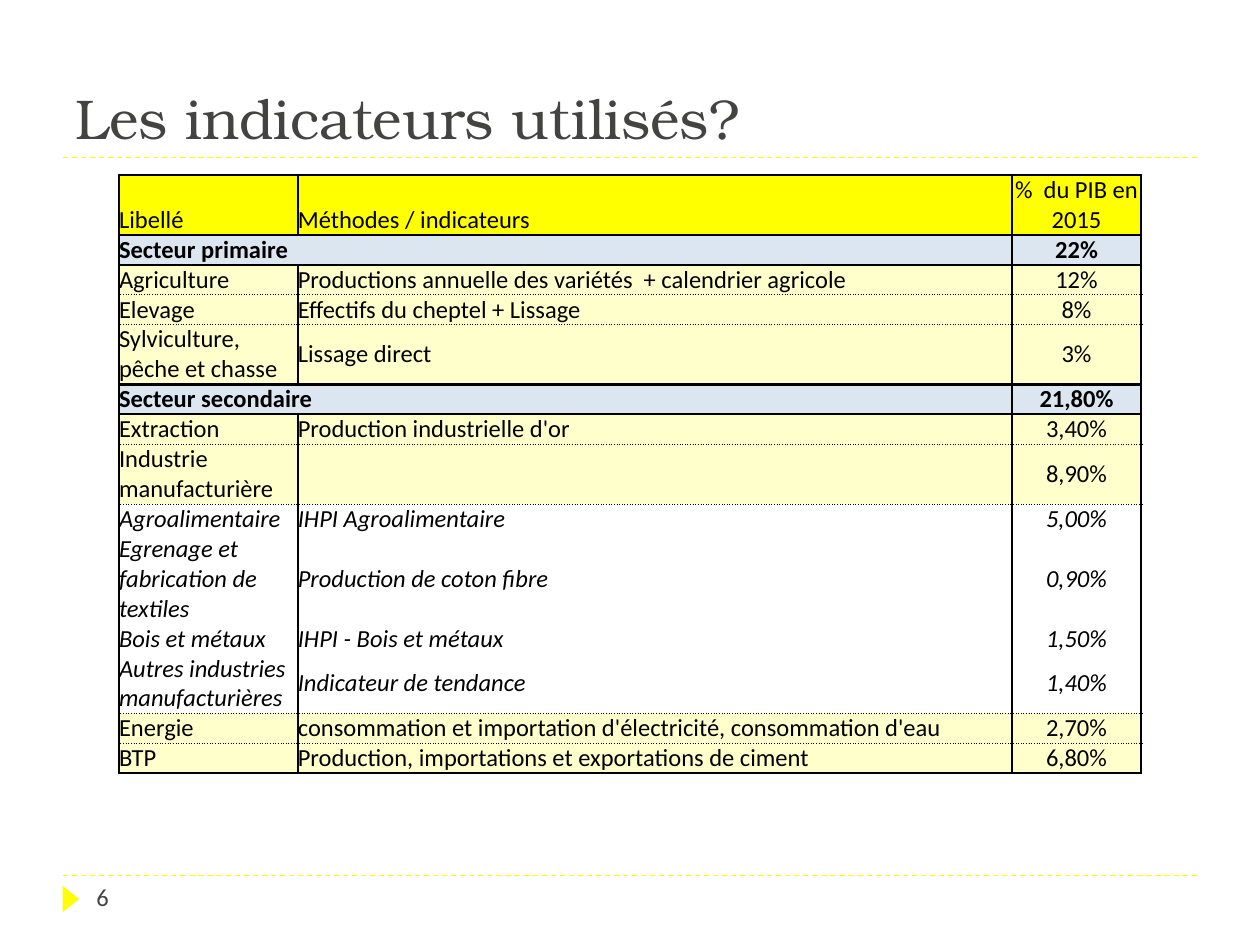
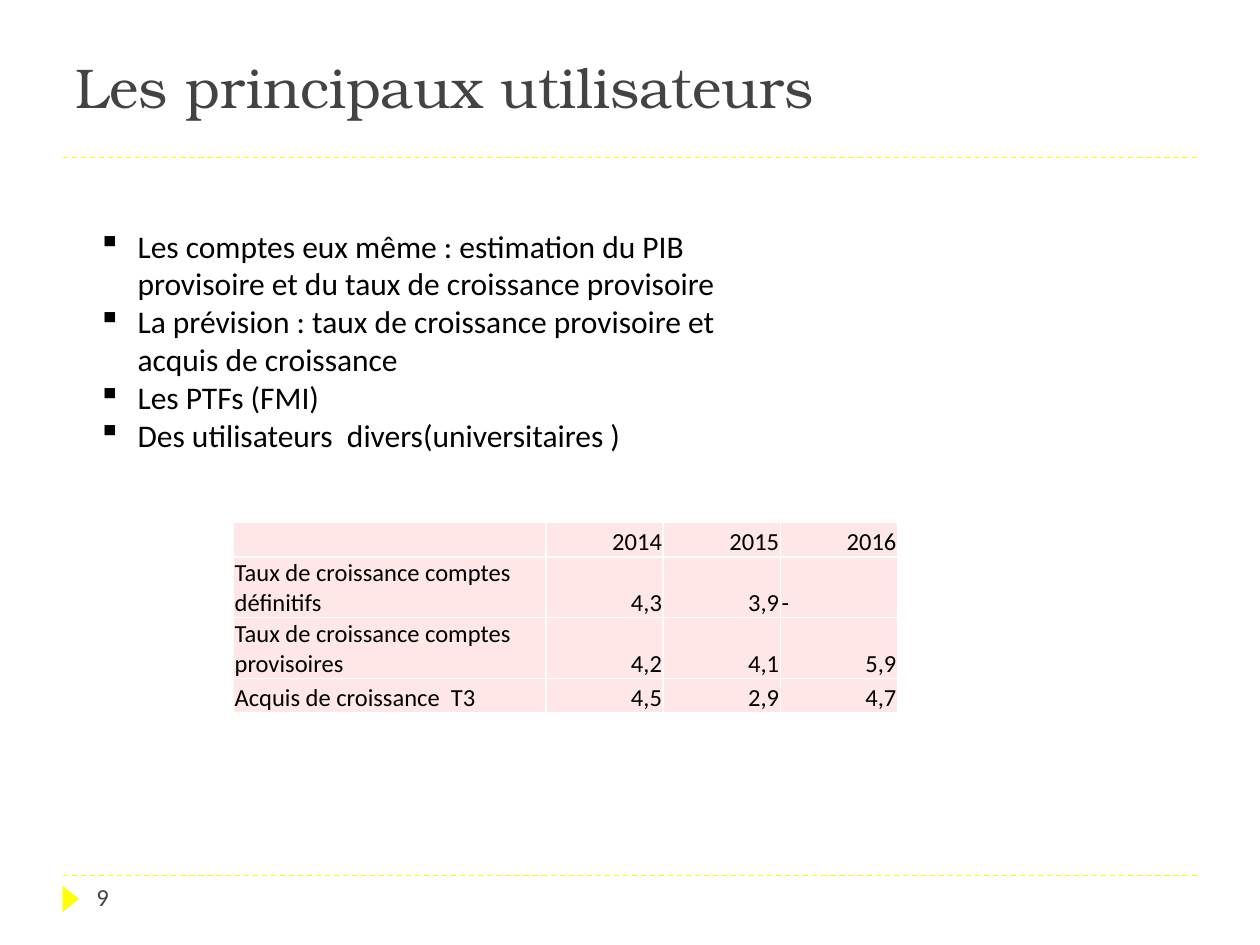
from dataclasses import dataclass

from lxml.etree import SubElement
from pptx import Presentation
from pptx.dml.color import RGBColor
from pptx.enum.dml import MSO_LINE_DASH_STYLE as Dash
from pptx.enum.shapes import MSO_CONNECTOR as Connector, MSO_SHAPE as Shape
from pptx.enum.text import MSO_ANCHOR as Anchor, MSO_AUTO_SIZE as AutoSize, PP_ALIGN as Align
from pptx.oxml.ns import qn
from pptx.util import Pt


@dataclass(frozen=True)
class Theme:
    title_font: str = "TeX Gyre Bonum"
    body_font: str = "Calibri"
    title_size: int = 32
    bullet_size: int = 18
    small_size: int = 14
    accent: str = "FFFF00"
    heading: str = "434342"
    ink: str = "000000"
    sector: str = "DCE6F1"
    branch: str = "FFFFCC"
    growth: str = "FFE7E7"
    gap: str = "FFFFFF"


THEME = Theme()
LEFT, RIGHT = 36, 684
TITLE_RULE, FOOTER_RULE = 90, 500.4

SOLID = (THEME.ink, 1.5, "solid")
DOTTED = (THEME.ink, 0.5, "dot")
WHITE = (THEME.gap, 1, "solid")

ROW_FILLS = {"header": THEME.accent, "sector": THEME.sector,
             "branch": THEME.branch, "detail": None}

INDICATORS = [
    ("header", 2, "Libellé", "Méthodes / indicateurs", "%  du PIB en 2015"),
    ("sector", 1, "Secteur primaire", "", "22%"),
    ("branch", 1, "Agriculture",
     "Productions annuelle des variétés  + calendrier agricole", "12%"),
    ("branch", 1, "Elevage", "Effectifs du cheptel + Lissage", "8%"),
    ("branch", 2, "Sylviculture, pêche et chasse", "Lissage direct", "3%"),
    ("sector", 1, "Secteur secondaire", "", "21,80%"),
    ("branch", 1, "Extraction", "Production industrielle d'or", "3,40%"),
    ("branch", 2, "Industrie manufacturière", "", "8,90%"),
    ("detail", 1, "Agroalimentaire", "IHPI Agroalimentaire", "5,00%"),
    ("detail", 3, "Egrenage et fabrication de textiles", "Production de coton fibre", "0,90%"),
    ("detail", 1, "Bois et métaux", "IHPI - Bois et métaux", "1,50%"),
    ("detail", 2, "Autres industries manufacturières", "Indicateur de tendance", "1,40%"),
    ("branch", 1, "Energie",
     "consommation et importation d'électricité, consommation d'eau", "2,70%"),
    ("branch", 1, "BTP", "Production, importations et exportations de ciment", "6,80%"),
]

GROWTH = [
    ("", "2014", "2015", "2016"),
    ("Taux de croissance comptes définitifs", "4,3", "3,9", "-"),
    ("Taux de croissance comptes provisoires", "4,2", "4,1", "5,9"),
    ("Acquis de croissance  T3", "4,5", "2,9", "4,7"),
]

USES = [
    "Les comptes eux même : estimation du PIB provisoire et du taux de croissance provisoire",
    "La prévision : taux de croissance provisoire et acquis de croissance",
    "Les PTFs (FMI)",
    "Des utilisateurs  divers(universitaires )",
]


def rgb(color):
    return RGBColor.from_string(color)


def add_run(paragraph, text, size, color=THEME.ink, font=THEME.body_font,
            bold=False, italic=False):
    run = paragraph.add_run()
    run.text = text
    run.font.size = Pt(size)
    run.font.name = font
    run.font.color.rgb = rgb(color)
    run.font.bold = bold
    run.font.italic = italic


def add_text_frame(slide, left, top, width, height):
    frame = slide.shapes.add_textbox(Pt(left), Pt(top), Pt(width), Pt(height)).text_frame
    frame.word_wrap = True
    return frame


def add_rule(slide, y):
    rule = slide.shapes.add_connector(Connector.STRAIGHT, Pt(LEFT), Pt(y), Pt(RIGHT), Pt(y))
    rule.line.color.rgb = rgb(THEME.accent)
    rule.line.width = Pt(0.75)
    rule.line.dash_style = Dash.DASH
    SubElement(rule._element.spPr, qn("a:effectLst"))


def add_page_marker(slide, number):
    marker = slide.shapes.add_shape(Shape.ISOSCELES_TRIANGLE, Pt(33), Pt(509), Pt(15), Pt(9.4))
    marker.rotation = 90
    marker.shadow.inherit = False
    marker.fill.solid()
    marker.fill.fore_color.rgb = rgb(THEME.accent)
    marker.line.fill.background()
    frame = add_text_frame(slide, 48, FOOTER_RULE, 156, 28.8)
    add_run(frame.paragraphs[0], number, THEME.small_size, THEME.heading)


def set_title(slide, text, height):
    title = slide.shapes.title
    title.left, title.top, title.width, title.height = Pt(LEFT), Pt(12.2), Pt(RIGHT - LEFT), Pt(height)
    frame = title.text_frame
    frame.auto_size = AutoSize.NONE
    frame.vertical_anchor = Anchor.BOTTOM
    frame.paragraphs[0].alignment = Align.LEFT
    add_run(frame.paragraphs[0], text, THEME.title_size, THEME.heading, THEME.title_font)


def add_page(deck, title, title_height, number):
    slide = deck.slides.add_slide(deck.slide_layouts[5])
    add_rule(slide, FOOTER_RULE)
    add_rule(slide, TITLE_RULE)
    set_title(slide, title, title_height)
    add_page_marker(slide, number)
    return slide


def add_grid(slide, left, top, widths, heights):
    frame = slide.shapes.add_table(len(heights), len(widths), Pt(left), Pt(top),
                                   Pt(sum(widths)), Pt(sum(heights)))
    grid = frame.table
    grid.first_row = grid.horz_banding = False
    for column, width in zip(grid.columns, widths):
        column.width = Pt(width)
    for row, height in zip(grid.rows, heights):
        row.height = Pt(height)
    return grid


def set_borders(cell, left, right, top, bottom):
    properties = cell._tc.get_or_add_tcPr()
    for side, border in zip("LRTB", (left, right, top, bottom)):
        if border is None:
            SubElement(SubElement(properties, qn(f"a:ln{side}")), qn("a:noFill"))
            continue
        color, width, dash = border
        line = SubElement(properties, qn(f"a:ln{side}"), w=str(Pt(width)))
        SubElement(SubElement(line, qn("a:solidFill")), qn("a:srgbClr"), val=color)
        SubElement(line, qn("a:prstDash"), val=dash)


def fill_cell(cell, text, fill, borders, anchor, align, inset=0, bold=False, italic=False):
    set_borders(cell, *borders)
    if fill:
        cell.fill.solid()
        cell.fill.fore_color.rgb = rgb(fill)
    else:
        cell.fill.background()
    cell.margin_left = cell.margin_right = cell.margin_top = Pt(inset)
    cell.margin_bottom = 0
    cell.vertical_anchor = anchor
    paragraph = cell.text_frame.paragraphs[0]
    paragraph.alignment = align
    if text:
        add_run(paragraph, text, THEME.small_size, bold=bold, italic=italic)
    else:
        SubElement(paragraph._p, qn("a:endParaRPr"), sz=str(THEME.small_size * 100))


def row_border(above, below):
    if not {above, below} <= {"branch", "detail"}:
        return SOLID
    return None if above == below == "detail" else DOTTED


def add_indicator_table(slide):
    line_height = 17.1
    grid = add_grid(slide, 68, 100, (102.2, 408.2, 73.6),
                    [line_height * lines for _, lines, *_ in INDICATORS])
    kinds = [kind for kind, *_ in INDICATORS]
    edges = [row_border(*pair) for pair in zip([None] + kinds, kinds + [None])]
    for r, (kind, _, *texts) in enumerate(INDICATORS):
        anchor = Anchor.BOTTOM if kind in ("header", "sector") else Anchor.MIDDLE
        for c, text in enumerate(texts):
            fill_cell(grid.cell(r, c), text, ROW_FILLS[kind],
                      (SOLID, SOLID, edges[r], edges[r + 1]), anchor,
                      Align.CENTER if c == 2 else Align.LEFT,
                      bold=kind == "sector", italic=kind == "detail")
        if kind == "sector":
            grid.cell(r, 0).merge(grid.cell(r, 1))


def add_growth_table(slide):
    grid = add_grid(slide, 133.4, 298.4, (178.6, 67, 67, 67), (19.8, 34.8, 34.8, 19.8))
    for r, texts in enumerate(GROWTH):
        for c, text in enumerate(texts):
            align = Align.LEFT if c == 0 or text == "-" else Align.RIGHT
            fill_cell(grid.cell(r, c), text, THEME.growth, [WHITE] * 4,
                      Anchor.BOTTOM, align, inset=0.7)


def add_bullets(slide, items):
    frame = add_text_frame(slide, 49, 126, 408, 160)
    for i, item in enumerate(items):
        paragraph = frame.add_paragraph() if i else frame.paragraphs[0]
        properties = paragraph._p.get_or_add_pPr()
        properties.set("marL", str(Pt(22.5)))
        properties.set("indent", str(-Pt(22.5)))
        SubElement(properties, qn("a:buChar"), char="▪")
        add_run(paragraph, item, THEME.bullet_size)


def main():
    deck = Presentation()
    deck.slide_width, deck.slide_height = Pt(720), Pt(540)

    indicators = add_page(deck, "Les indicateurs utilisés?", 77.8, "6")
    add_indicator_table(indicators)

    users = add_page(deck, "Les principaux utilisateurs", 59.8, "9")
    add_growth_table(users)
    add_bullets(users, USES)

    deck.save("out.pptx")


if __name__ == "__main__":
    main()
